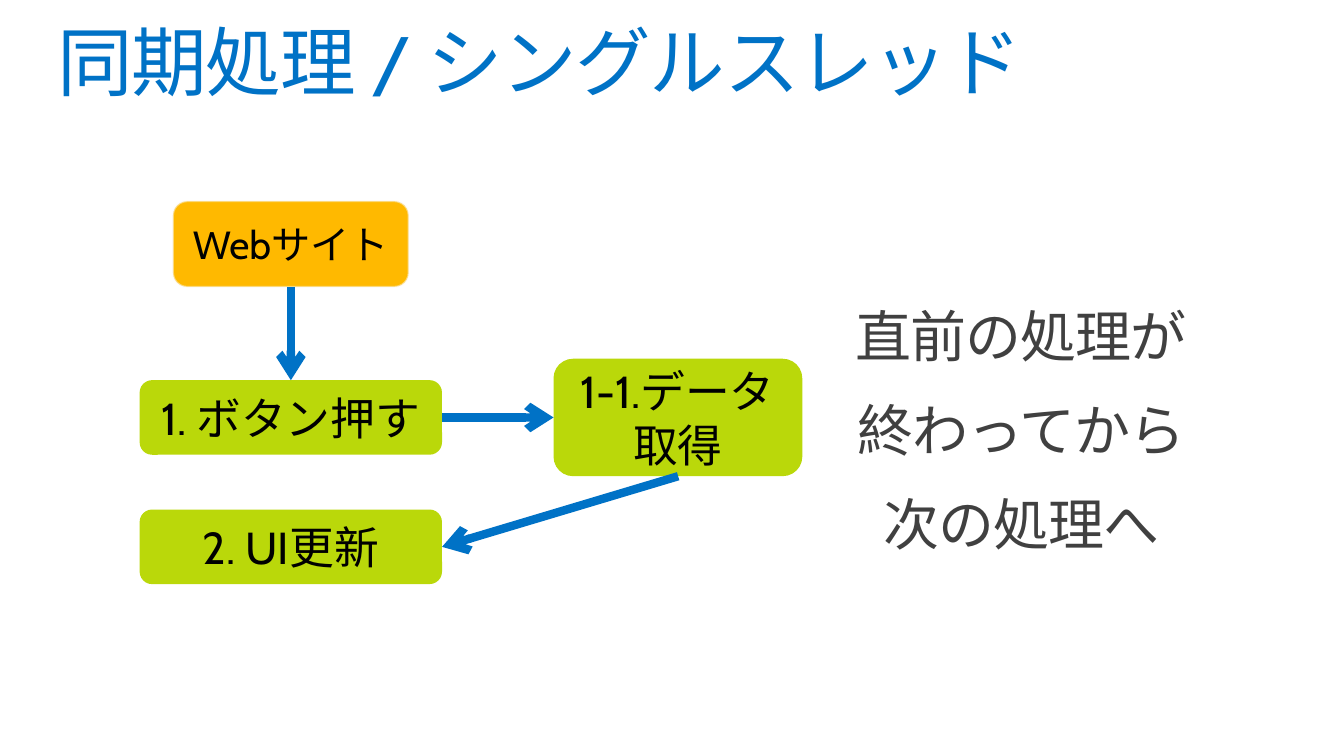
"""Build a slide on synchronous, single-threaded processing."""
from dataclasses import dataclass

from lxml import etree
from pptx import Presentation
from pptx.dml.color import RGBColor
from pptx.enum.shapes import MSO_CONNECTOR, MSO_SHAPE
from pptx.enum.text import MSO_ANCHOR, PP_ALIGN
from pptx.oxml.ns import qn
from pptx.util import Cm, Pt

ROUNDED = MSO_SHAPE.ROUNDED_RECTANGLE
STRAIGHT = MSO_CONNECTOR.STRAIGHT
MIDDLE, TOP_ANCHOR = MSO_ANCHOR.MIDDLE, MSO_ANCHOR.TOP
CENTER, LEFT_ALIGN = PP_ALIGN.CENTER, PP_ALIGN.LEFT

FONT = "Cabin"
BLUE, ORANGE, GREEN = "0072C6", "FFB900", "BAD80A"
BLACK, GRAY, PALE = "000000", "404040", "F9F9F9"


@dataclass
class Box:
    text: str
    x: float
    y: float
    w: float
    h: float
    fill: str = GREEN
    size: float = 32
    line: str | None = None

    def top(self) -> tuple[float, float]:
        return self.x + self.w / 2, self.y

    def bottom(self) -> tuple[float, float]:
        return self.x + self.w / 2, self.y + self.h

    def left(self) -> tuple[float, float]:
        return self.x, self.y + self.h / 2

    def right(self) -> tuple[float, float]:
        return self.x + self.w, self.y + self.h / 2


@dataclass
class Arrow:
    start: tuple[float, float]
    end: tuple[float, float]


SITE = Box("Webサイト", 4.36, 5.07, 5.94, 2.16, ORANGE, 28, PALE)
PRESS = Box("1. ボタン押す", 3.52, 9.58, 7.62, 1.88)
FETCH = Box("1-1.データ取得", 13.95, 9.04, 6.27, 2.96)
UPDATE = Box("2. UI更新", 3.52, 12.84, 7.62, 1.88)
ARROWS = [
    Arrow(SITE.bottom(), PRESS.top()),
    Arrow(FETCH.bottom(), UPDATE.right()),
    Arrow(PRESS.right(), FETCH.left()),
]


def rgb(color: str) -> RGBColor:
    return RGBColor.from_string(color)


def write_text(sp, *lines: str, size: float, color: str, align=CENTER,
               anchor=TOP_ANCHOR, inset: float = 0, spacing: float = 1,
               before: float = 0, tracking: float = 0) -> None:
    tf = sp.text_frame
    tf.word_wrap = True
    tf.vertical_anchor = anchor
    tf.margin_left = tf.margin_right = tf.margin_top = tf.margin_bottom = Cm(inset)
    for i, line in enumerate(lines):
        p = tf.add_paragraph() if i else tf.paragraphs[0]
        p.alignment = align
        p.line_spacing = spacing
        p.space_before = Pt(before)
        r = p.add_run()
        r.text = line
        r.font.size = Pt(size)
        r.font.name = FONT
        r.font.color.rgb = rgb(color)
        rpr = r.font._element
        if tracking:
            rpr.set("spc", str(round(tracking * 100)))
        etree.SubElement(rpr, qn("a:ea"), typeface=FONT)


def add_text(s, x: float, y: float, w: float, h: float, *lines: str, **style) -> None:
    sp = s.shapes.add_textbox(Cm(x), Cm(y), Cm(w), Cm(h))
    write_text(sp, *lines, **style)


def add_box(s, box: Box) -> None:
    sp = s.shapes.add_shape(ROUNDED, Cm(box.x), Cm(box.y), Cm(box.w), Cm(box.h))
    sp.shadow.inherit = False
    sp.fill.solid()
    sp.fill.fore_color.rgb = rgb(box.fill)
    if box.line:
        sp.line.color.rgb = rgb(box.line)
        sp.line.width = Pt(1.35)
        color = sp.line._ln.find(".//" + qn("a:srgbClr"))
        etree.SubElement(color, qn("a:alpha"), val="50000")
    else:
        sp.line.fill.background()
    write_text(sp, box.text, size=box.size, color=BLACK, anchor=MIDDLE, inset=0.13)


def add_arrow(s, arrow: Arrow) -> None:
    points = [Cm(round(v, 2)) for v in arrow.start + arrow.end]
    cn = s.shapes.add_connector(STRAIGHT, *points)
    cn.line.color.rgb = rgb(BLUE)
    cn.line.width = Pt(6)
    etree.SubElement(cn.line._ln, qn("a:tailEnd"), type="arrow")
    etree.SubElement(cn._element.spPr, qn("a:effectLst"))


def main() -> None:
    prs = Presentation()
    prs.slide_width, prs.slide_height = Cm(33.87), Cm(19.05)
    s = prs.slides.add_slide(prs.slide_layouts[6])
    add_text(s, 1.45, 0.64, 30.96, 2.08, "同期処理 / シングルスレッド",
             size=54, color=BLUE, align=LEFT_ALIGN, spacing=0.9, tracking=-1)
    for box in (SITE, PRESS, FETCH, UPDATE):
        add_box(s, box)
    for arrow in ARROWS:
        add_arrow(s, arrow)
    add_text(s, 18.89, 7.79, 13.69, 7.04, "直前の処理が", "終わってから", "次の処理へ",
             size=40, color=GRAY, spacing=0.9, before=24, tracking=-0.7)
    prs.save("out.pptx")


if __name__ == "__main__":
    main()
